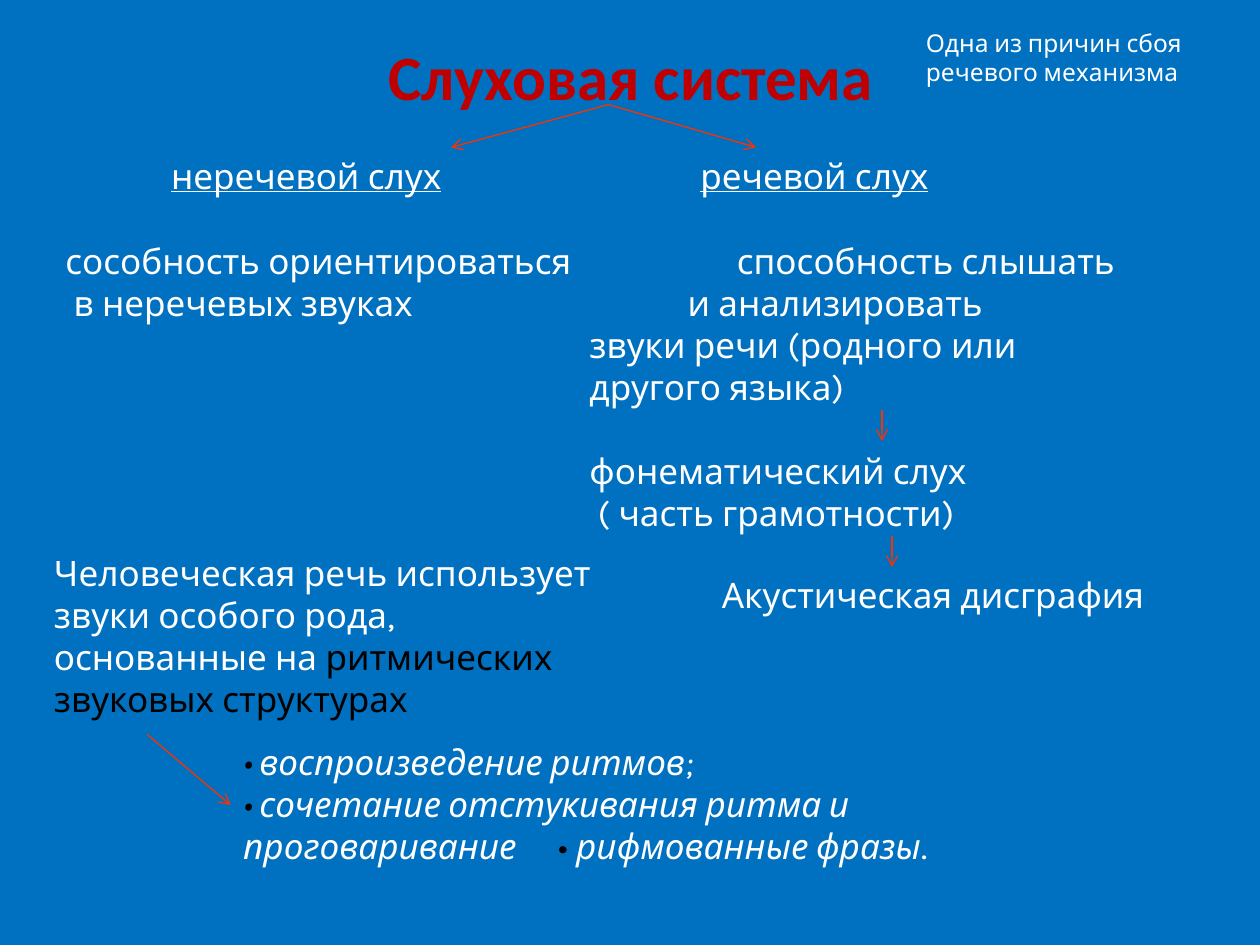
from dataclasses import dataclass

import pptx
import pptx.dml.color
import pptx.enum.shapes
import pptx.enum.text
import pptx.oxml
import pptx.oxml.ns
import pptx.util
from pptx.util import Inches

WHITE, BLACK, RED, ORANGE, BLUE = "FFFFFF", "000000", "C00000", "F93200", "0070C0"


@dataclass(frozen=True)
class Span:
    text: str
    color: str = WHITE
    size: float = 20
    font: str = "Karla"
    bold: bool = False
    italic: bool = False
    underline: bool = False


@dataclass(frozen=True)
class Line:
    spans: tuple[Span, ...]
    indent: float = 0
    before: float = 0
    tab: float = 0
    centered: bool = False


@dataclass(frozen=True)
class Block:
    left: float
    top: float
    width: float
    height: float
    lines: tuple[Line, ...]


@dataclass(frozen=True)
class Arrow:
    start: tuple[float, float]
    end: tuple[float, float]


def rgb(value: str) -> pptx.dml.color.RGBColor:
    return pptx.dml.color.RGBColor.from_string(value)


def plain(text: str, indent: float = 0, before: float = 0, **style) -> Line:
    return Line((Span(text, **style),), indent, before)


def write_line(paragraph, line: Line) -> None:
    paragraph.space_before = pptx.util.Pt(line.before)
    align = pptx.enum.text.PP_ALIGN
    paragraph.alignment = align.CENTER if line.centered else align.LEFT
    properties = paragraph._p.get_or_add_pPr()
    properties.set("marL", str(Inches(line.indent)))
    properties.set("indent", "0")
    pptx.oxml.ns.qn("a:buNone")
    properties.append(pptx.oxml.parse_xml(
        f'<a:buNone {pptx.oxml.ns.nsdecls("a")}/>'))
    if line.tab:
        properties.append(pptx.oxml.parse_xml(
            f'<a:tabLst {pptx.oxml.ns.nsdecls("a")}>'
            f'<a:tab pos="{Inches(line.tab)}" algn="l"/></a:tabLst>'))
    for span in line.spans:
        run = paragraph.add_run()
        run.text = span.text
        run.font.name = span.font
        run.font.size = pptx.util.Pt(span.size)
        run.font.bold = span.bold
        run.font.italic = span.italic
        run.font.underline = span.underline
        run.font.color.rgb = rgb(span.color)


def fill_block(holder, block: Block) -> None:
    holder.left, holder.top = Inches(block.left), Inches(block.top)
    holder.width, holder.height = Inches(block.width), Inches(block.height)
    frame = holder.text_frame
    frame.word_wrap = True
    frame.auto_size = pptx.enum.text.MSO_AUTO_SIZE.NONE
    frame.vertical_anchor = pptx.enum.text.MSO_ANCHOR.TOP
    for index, line in enumerate(block.lines):
        write_line(frame.add_paragraph() if index else frame.paragraphs[0], line)


def draw_block(slide, block: Block) -> None:
    fill_block(slide.shapes.add_textbox(0, 0, 0, 0), block)


def draw_arrow(slide, arrow: Arrow) -> None:
    connector = slide.shapes.add_connector(
        pptx.enum.shapes.MSO_CONNECTOR.STRAIGHT,
        *(Inches(value) for value in arrow.start + arrow.end))
    connector.line.color.rgb = rgb(ORANGE)
    connector.line.width = pptx.util.Pt(0.75)
    namespace = pptx.oxml.ns.nsdecls("a")
    connector.line._get_or_add_ln().append(
        pptx.oxml.parse_xml(f'<a:tailEnd {namespace} type="arrow"/>'))
    connector._element.spPr.append(
        pptx.oxml.parse_xml(f"<a:effectLst {namespace}/>"))


HEADING = Block(0.42, 0.25, 9.17, 0.7, (
    Line((Span("Слуховая система", RED, 36, "Calibri", bold=True),), centered=True),))

RHYTHM_TASKS = Block(1.83, 5.83, 6.83, 1.45, (
    Line((Span("• ", BLACK, italic=True),
          Span("воспроизведение ритмов;", italic=True))),
    Line((Span("•", BLACK, italic=True),
          Span(" сочетание отстукивания ритма и проговаривание\t", italic=True),
          Span("• ", BLACK),
          Span("рифмованные фразы", italic=True),
          Span(".")), tab=4.81),
))

BLOCKS = (
    Block(1.26, 1.18, 3, 0.44, (plain("неречевой слух", underline=True),)),
    Block(5.46, 1.18, 3, 0.44, (plain("речевой слух", underline=True),)),
    Block(0.42, 1.85, 4.5, 0.77, (
        plain("сособность ориентироваться"),
        plain(" в неречевых звуках"))),
    Block(4.58, 1.85, 5, 2.45, (
        plain("способность слышать", indent=1.17),
        plain("и анализировать", indent=0.78),
        plain("звуки речи (родного или"),
        plain("другого языка)"),
        plain("фонематический слух", before=24),
        plain(" ( часть грамотности)"))),
    Block(5.63, 4.5, 4.12, 0.44, (plain("Акустическая дисграфия"),)),
    Block(0.33, 4.33, 4.58, 1.45, (
        Line((Span("Человеческая речь использует звуки особого рода, основанные на "),
              Span("ритмических звуковых структурах", BLACK))),)),
    Block(7.25, 0.17, 2.42, 0.57, (
        plain("Одна из причин сбоя", size=14),
        plain("речевого механизма", size=14))),
)

HEARING_FORK = (4.83, 0.83)
ARROWS = (
    Arrow((7, 3.25), (7, 3.5)),
    Arrow((7.08, 4.25), (7.08, 4.5)),
    Arrow(HEARING_FORK, (3.58, 1.17)),
    Arrow(HEARING_FORK, (6, 1.17)),
    Arrow((1.17, 5.83), (1.83, 6.39)),
)


def main() -> None:
    deck = pptx.Presentation()
    deck.slide_width, deck.slide_height = Inches(10), Inches(7.5)
    slide = deck.slides.add_slide(deck.slide_layouts[1])
    slide.background.fill.solid()
    slide.background.fill.fore_color.rgb = rgb(BLUE)
    fill_block(slide.shapes.title, HEADING)
    fill_block(slide.placeholders[1], RHYTHM_TASKS)
    for block in BLOCKS:
        draw_block(slide, block)
    for arrow in ARROWS:
        draw_arrow(slide, arrow)
    deck.save("out.pptx")


if __name__ == "__main__":
    main()
